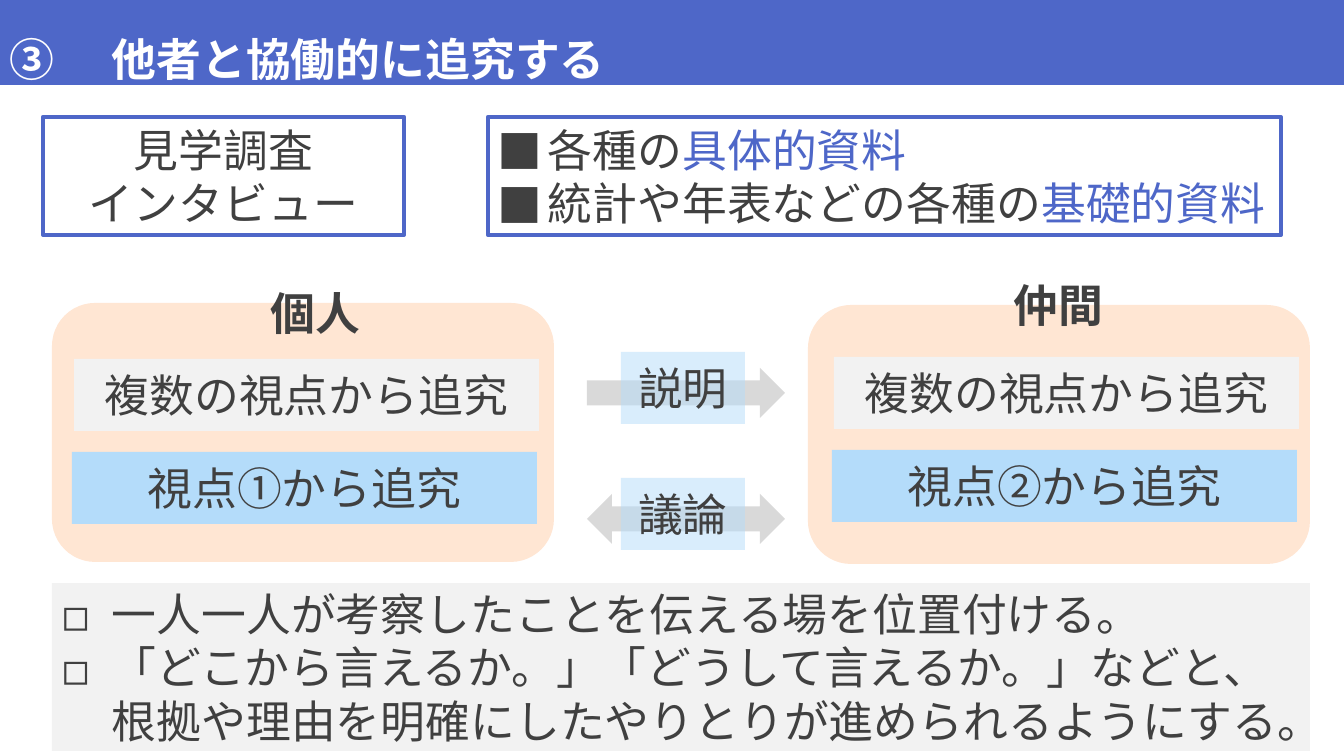
from dataclasses import dataclass

from lxml import etree
from pptx import Presentation
from pptx import util as u
from pptx.dml.color import RGBColor
from pptx.enum import shapes, text
from pptx.oxml.ns import qn


@dataclass(frozen=True)
class Theme:
    font: str = "Noto Sans CJK JP"
    size: int = 32
    blue: str = "4E67C8"
    sky: str = "B4DCFA"
    peach: str = "FFE6D3"
    pale: str = "F2F2F2"
    gray: str = "D9D9D9"
    ink: str = "404040"
    white: str = "FFFFFF"


T = Theme()
PX = 914400 / 100.8
SLIDE = (1344, 756)
KIND = shapes.MSO_SHAPE

# A paragraph is a list of (wording, colour) runs.
TITLE = [[("　他者と協働的に追究する", T.white)]]
FIELDWORK = [[("見学調査", T.ink)], [("インタビュー", T.ink)]]
MATERIALS = [
    [("各種の", T.ink), ("具体的資料", T.blue)],
    [("統計や年表などの各種の", T.ink), ("基礎的資料", T.blue)],
]
POINTS = [
    [("一人一人が考察したことを伝える場を位置付ける。", T.ink)],
    [("「どこから言えるか。」「どうして言えるか。」などと、"
      "根拠や理由を明確にしたやりとりが進められるようにする。", T.ink)],
]
MANY_VIEWS = "複数の視点から追究"
# who, own viewpoint, card corner, heading corner, first row corner
PEOPLE = [
    ("個人", "視点①から追究", (52, 303), (231, 277), (74, 359)),
    ("仲間", "視点②から追究", (808, 305), (974, 269), (834, 357)),
]
# label, arrow kind, label top
EXCHANGES = [
    ("説明", KIND.RIGHT_ARROW, 352),
    ("議論", KIND.LEFT_RIGHT_ARROW, 478),
]

CARD = (502, 259)
HEADING = (169, 72)
ROW = (465, 72)
ROW_STEP = (-2, 93)
SOURCE_TOP, SOURCE_H = 117, 118
ARROW_X, ARROW_SIZE, ARROW_DROP = 587, (198, 50), 16
LABEL_X, LABEL_SIZE = 621, (124, 72)

prs = Presentation()


def px(n):
    return u.Emu(round(n * PX))


def rgb(code):
    return RGBColor.from_string(code)


def plain(words):
    return [[(words, T.ink)]]


def add_box(at, size, fill=None, line=None, kind=KIND.RECTANGLE, alpha=None):
    sp = s.shapes.add_shape(kind, *map(px, at + size))
    sp.shadow.inherit = False
    if fill:
        sp.fill.solid()
        sp.fill.fore_color.rgb = rgb(fill)
        if alpha:
            color = sp.fill._xPr.find(f".//{qn('a:srgbClr')}")
            etree.SubElement(color, qn("a:alpha"), val=str(alpha * 1000))
    else:
        sp.fill.background()
    if line:
        sp.line.color.rgb = rgb(line)
        sp.line.width = u.Pt(3)
    else:
        sp.line.fill.background()
    return sp


def write(sp, paragraphs, bold=False, align=text.PP_ALIGN.CENTER,
          anchor=text.MSO_ANCHOR.MIDDLE):
    tf = sp.text_frame
    tf.word_wrap = True
    tf.vertical_anchor = anchor
    for i, runs in enumerate(paragraphs):
        p = tf.add_paragraph() if i else tf.paragraphs[0]
        p.alignment = align
        for words, color in runs:
            r = p.add_run()
            r.text = words
            r.font.name = T.font
            r.font.size = u.Pt(T.size)
            r.font.bold = bold
            r.font.color.rgb = rgb(color)
            etree.SubElement(r._r.rPr, qn("a:ea"), typeface=T.font)
    return tf


def hang(tf, indent, tag, **attrs):
    """Give every paragraph a bullet with a hanging indent."""
    for p in tf.paragraphs:
        pPr = p._p.get_or_add_pPr()
        pPr.set("marL", str(px(indent)))
        pPr.set("indent", str(-px(indent)))
        etree.SubElement(pPr, qn("a:buFont"), typeface=T.font)
        etree.SubElement(pPr, qn(tag), **attrs)


def add_list(at, size, paragraphs, mark, **look):
    tf = write(add_box(at, size, **look), paragraphs, align=text.PP_ALIGN.LEFT)
    hang(tf, 50, "a:buChar", char=mark)


def add_person(who, own_view, card, heading, row):
    add_box(card, CARD, T.peach, kind=KIND.ROUNDED_RECTANGLE)
    name = s.shapes.add_textbox(*map(px, heading + HEADING))
    write(name, plain(who), bold=True)
    for i, (words, fill) in enumerate([(MANY_VIEWS, T.pale), (own_view, T.sky)]):
        at = tuple(start + i * step for start, step in zip(row, ROW_STEP))
        write(add_box(at, ROW, fill), plain(words))


def add_exchange(words, kind, top):
    # The label box is translucent, so the arrow shows through it.
    arrow_top = top + (LABEL_SIZE[1] - ARROW_SIZE[1]) // 2 + 5
    add_box((ARROW_X, arrow_top), ARROW_SIZE, T.gray, kind=kind)
    write(add_box((LABEL_X, top), LABEL_SIZE, T.sky, alpha=50), plain(words))


prs.slide_width, prs.slide_height = map(px, SLIDE)
s = prs.slides.add_slide(prs.slide_layouts[6])

title = write(add_box((0, 0), (SLIDE[0], 85), T.blue), TITLE, bold=True,
              align=text.PP_ALIGN.LEFT, anchor=text.MSO_ANCHOR.TOP)
title.paragraphs[0].line_spacing = 1.5
hang(title, 57, "a:buAutoNum", type="circleNumDbPlain", startAt="3")

write(add_box((43, SOURCE_TOP), (361, SOURCE_H), T.white, T.blue), FIELDWORK)
add_list((488, SOURCE_TOP), (793, SOURCE_H), MATERIALS, "■",
         fill=T.white, line=T.blue)
for person in PEOPLE:
    add_person(*person)
for exchange in EXCHANGES:
    add_exchange(*exchange)
add_list((52, 583), (1258, 168), POINTS, "◻", fill=T.pale)

prs.save("out.pptx")
